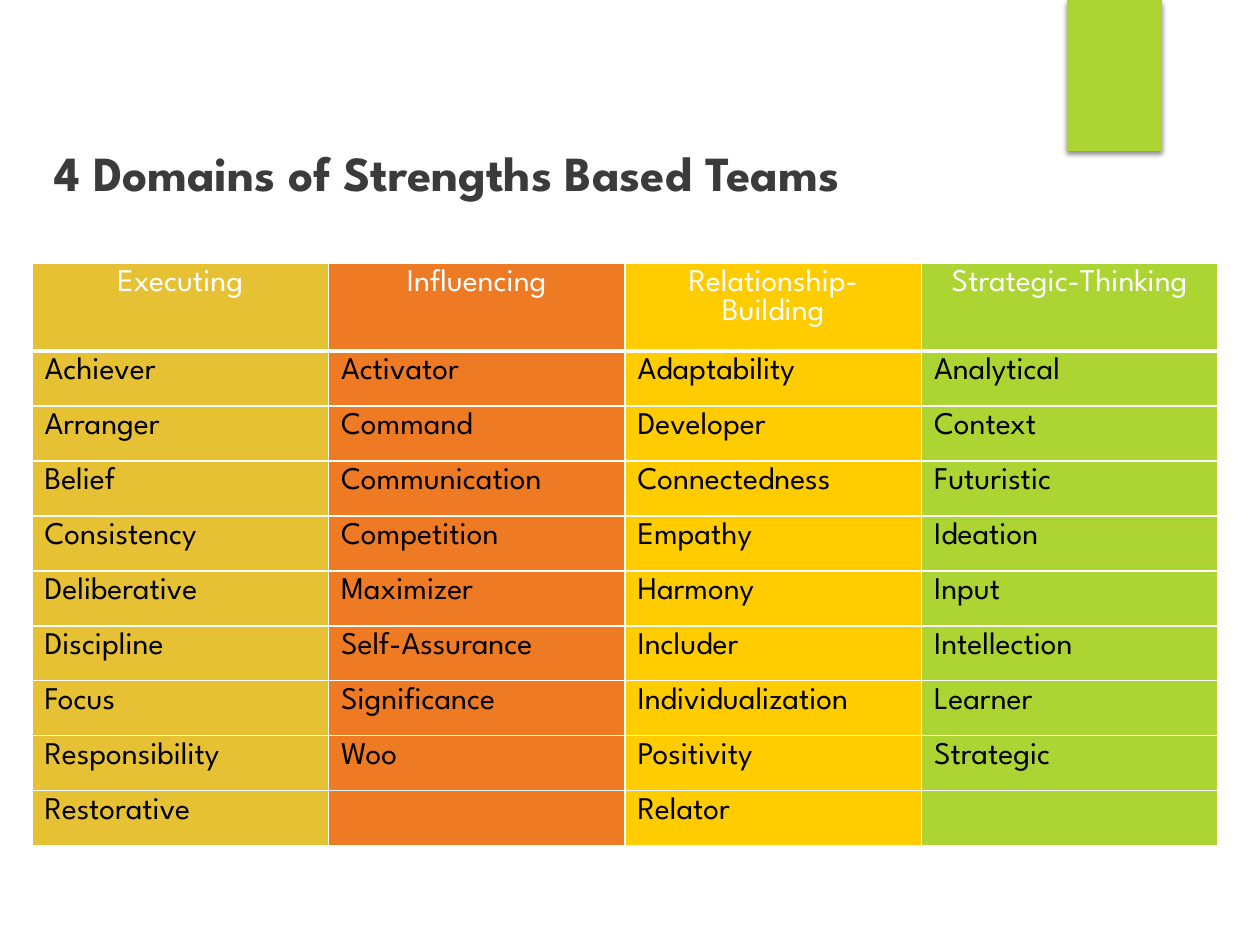
"""Build a slide with a table of the four domains of strengths based teams."""
import lxml.etree
import pptx
import pptx.dml.color
import pptx.enum.shapes
import pptx.enum.text
import pptx.oxml
import pptx.oxml.ns
import pptx.util

RGBColor = pptx.dml.color.RGBColor
GOLD = RGBColor(0xE6, 0xC1, 0x33)
ORANGE = RGBColor(0xEF, 0x7A, 0x24)
YELLOW = RGBColor(0xFF, 0xCC, 0x00)
GREEN = RGBColor(0xAC, 0xD4, 0x33)
WHITE = RGBColor(0xFF, 0xFF, 0xFF)
BLACK = RGBColor(0x00, 0x00, 0x00)
CHARCOAL = RGBColor(0x3B, 0x3B, 0x3B)
FONT = "League Spartan"
PX = 914400 / 126
DOMAINS = [
    (GOLD, ["Executing", "Achiever", "Arranger", "Belief", "Consistency", "Deliberative",
            "Discipline", "Focus", "Responsibility", "Restorative"]),
    (ORANGE, ["Influencing", "Activator", "Command", "Communication", "Competition",
              "Maximizer", "Self-Assurance", "Significance", "Woo", ""]),
    (YELLOW, ["Relationship-Building", "Adaptability", "Developer", "Connectedness", "Empathy",
              "Harmony", "Includer", "Individualization", "Positivity", "Relator"]),
    (GREEN, ["Strategic-Thinking", "Analytical", "Context", "Futuristic", "Ideation", "Input",
             "Intellection", "Learner", "Strategic", ""]),
]
HEADER_HEIGHT, ROW_HEIGHT = 88, 55
ROWS = len(DOMAINS[0][1])


def px(*lengths):
    return [pptx.util.Emu(round(length * PX)) for length in lengths]


def style(paragraph, size, color, bold):
    paragraph.font.size = pptx.util.Pt(size)
    for span in paragraph.runs:
        span.font.name = FONT
        span.font.size = pptx.util.Pt(size)
        span.font.bold = bold
        span.font.color.rgb = color


deck = pptx.Presentation()
deck.slide_width, deck.slide_height = px(1260, 945)
page = deck.slides.add_slide(deck.slide_layouts[5])

tab = page.shapes.add_shape(pptx.enum.shapes.MSO_SHAPE.RECTANGLE, *px(1067, 0, 95, 151))
tab.fill.solid()
tab.fill.fore_color.rgb = GREEN
tab.line.fill.background()
tab.shadow.inherit = False
effects = tab._element.spPr.find(pptx.oxml.ns.qn("a:effectLst"))
effects.append(pptx.oxml.parse_xml(
    f'<a:outerShdw {pptx.oxml.ns.nsdecls("a")} blurRad="38100" dist="25400" dir="5400000" '
    'rotWithShape="0"><a:srgbClr val="000000"><a:alpha val="45000"/></a:srgbClr></a:outerShdw>'))

title = page.shapes.title
title.left, title.top, title.width, title.height = px(42, 136, 1112, 72)
title.text_frame.text = "4 Domains of Strengths Based Teams"
title.text_frame.auto_size = pptx.enum.text.MSO_AUTO_SIZE.NONE
title.text_frame.vertical_anchor = pptx.enum.text.MSO_ANCHOR.BOTTOM
heading = title.text_frame.paragraphs[0]
heading.alignment = pptx.enum.text.PP_ALIGN.LEFT
style(heading, 28, CHARCOAL, True)

table_height = HEADER_HEIGHT + (ROWS - 1) * ROW_HEIGHT
table = page.shapes.add_table(ROWS, len(DOMAINS), *px(32, 263, 1186, table_height)).table
table.horz_banding = False
for index, row in enumerate(table.rows):
    row.height = px(ROW_HEIGHT if index else HEADER_HEIGHT)[0]

for column, (color, names) in enumerate(DOMAINS):
    for index, name in enumerate(names):
        cell = table.cell(index, column)
        cell.text_frame.text = name
        para = cell.text_frame.paragraphs[0]
        style(para, 18, BLACK if index else WHITE, False)
        if index == 0:
            para.alignment = pptx.enum.text.PP_ALIGN.CENTER
            for side, points in (("L", 1), ("R", 1), ("T", 1), ("B", 3)):
                border = lxml.etree.SubElement(
                    cell._tc.get_or_add_tcPr(), pptx.oxml.ns.qn(f"a:ln{side}"),
                    w=str(pptx.util.Pt(points)))
                fill = lxml.etree.SubElement(border, pptx.oxml.ns.qn("a:solidFill"))
                lxml.etree.SubElement(fill, pptx.oxml.ns.qn("a:srgbClr"), val=str(WHITE))
        cell.fill.solid()
        cell.fill.fore_color.rgb = color

deck.save("out.pptx")
